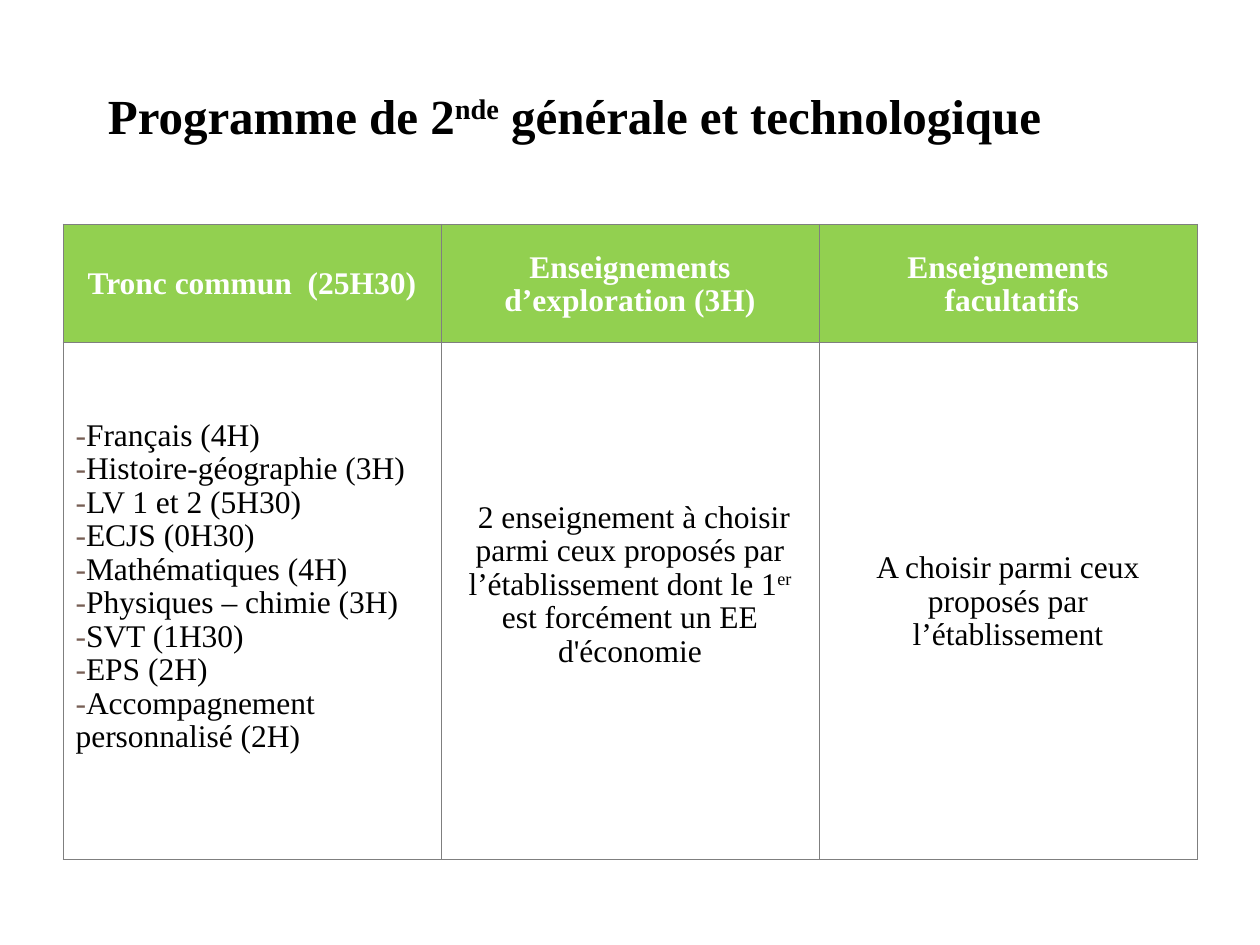
from dataclasses import dataclass

from lxml.etree import SubElement
from pptx import Presentation
from pptx.dml.color import RGBColor
from pptx.enum.text import MSO_ANCHOR, MSO_AUTO_SIZE, PP_ALIGN
from pptx.oxml.ns import qn
from pptx.util import Inches, Pt


@dataclass(frozen=True)
class Theme:
    font: str = "Times New Roman"
    title_size: int = 28
    table_size: int = 18
    text: str = "000000"
    header_text: str = "FFFFFF"
    header_fill: str = "92D050"
    bullet: str = "775F55"
    border: str = "7F7F7F"
    border_width: float = 0.45


THEME = Theme()
HEADERS = [
    ["Tronc commun  (25H30)"],
    ["Enseignements", "d’exploration (3H)"],
    ["Enseignements", " facultatifs"],
]
CORE_SUBJECTS = [
    "Français (4H)",
    "Histoire-géographie (3H)",
    "LV 1 et 2 (5H30)",
    "ECJS (0H30)",
    "Mathématiques (4H)",
    "Physiques – chimie (3H)",
    "SVT (1H30)",
    "EPS (2H)",
    "Accompagnement personnalisé (2H)",
]
# A ^ marks the start and the end of raised text
EXPLORATION = [
    " 2 enseignement à choisir parmi ceux proposés par l’établissement"
    " dont le 1^er^ est forcément un EE d'économie"
]
OPTIONAL = ["A choisir parmi ceux proposés par l’établissement"]


def add_solid_fill(parent, color):
    fill = SubElement(parent, qn("a:solidFill"))
    SubElement(fill, qn("a:srgbClr"), val=color)


def add_dash(para):
    properties = para._p.get_or_add_pPr()
    properties.set("marL", "0")
    properties.set("indent", "0")
    color = SubElement(properties, qn("a:buClr"))
    SubElement(color, qn("a:srgbClr"), val=THEME.bullet)
    SubElement(properties, qn("a:buFont"), typeface=THEME.font)
    SubElement(properties, qn("a:buChar"), char="-")


def write_text(frame, lines, *, size=THEME.table_size, color=THEME.text, bold=False,
               align=PP_ALIGN.CENTER, spacing=0.96, dashed=False):
    for index, line in enumerate(lines):
        para = frame.add_paragraph() if index else frame.paragraphs[0]
        if dashed:
            add_dash(para)
        para.alignment = align
        para.line_spacing = spacing
        para.space_before = para.space_after = Pt(0)
        for position, text in enumerate(line.split("^")):
            span = para.add_run()
            span.text = text
            span.font.name = THEME.font
            span.font.size = Pt(size)
            span.font.bold = bold
            span.font.color.rgb = RGBColor.from_string(color)
            if position % 2:
                span._r.get_or_add_rPr().set("baseline", "30000")


def format_cell(cell, fill=None, top=0.07, bottom=0.05, anchor=MSO_ANCHOR.MIDDLE):
    cell.margin_left = cell.margin_right = Inches(0.1)
    cell.margin_top, cell.margin_bottom = Inches(top), Inches(bottom)
    cell.vertical_anchor = anchor
    # Borders come before the fill in the cell properties
    properties = cell._tc.get_or_add_tcPr()
    for side in ("lnL", "lnR", "lnT", "lnB"):
        line = SubElement(properties, qn(f"a:{side}"), w=str(Pt(THEME.border_width)))
        add_solid_fill(line, THEME.border)
    if fill:
        cell.fill.solid()
        cell.fill.fore_color.rgb = RGBColor.from_string(fill)
    else:
        cell.fill.background()


def place_title(page, left, top, width, height):
    title = page.shapes.title
    title.left, title.top, title.width, title.height = left, top, width, height
    frame = title.text_frame
    frame.word_wrap = True
    frame.auto_size = MSO_AUTO_SIZE.NONE
    frame.vertical_anchor = MSO_ANCHOR.MIDDLE
    frame.margin_left = frame.margin_right = frame.margin_top = frame.margin_bottom = 0
    write_text(frame, ["Programme de 2^nde^ générale et technologique"],
               size=THEME.title_size, bold=True, spacing=0.93)


def place_programme(page, left, top, width, height):
    table = page.shapes.add_table(2, len(HEADERS), left, top, width, height).table
    header_height = Inches(0.94)
    table.rows[0].height = header_height
    table.rows[1].height = height - header_height

    # Header row
    for column, lines in enumerate(HEADERS):
        cell = table.cell(0, column)
        format_cell(cell, fill=THEME.header_fill)
        write_text(cell.text_frame, lines, color=THEME.header_text, bold=True)

    # Core subjects, set down from the top of their cell
    core = table.cell(1, 0)
    format_cell(core, top=0.61, anchor=MSO_ANCHOR.TOP)
    write_text(core.text_frame, CORE_SUBJECTS, align=PP_ALIGN.LEFT, dashed=True)

    # Subjects to choose; the exploration text sits a little above the middle
    choices = ((EXPLORATION, 0.32), (OPTIONAL, 0.05))
    for column, (lines, bottom) in enumerate(choices, start=1):
        cell = table.cell(1, column)
        format_cell(cell, bottom=bottom)
        write_text(cell.text_frame, lines)


def main():
    deck = Presentation()
    deck.slide_width, deck.slide_height = Inches(10), Inches(7.5)
    page = deck.slides.add_slide(deck.slide_layouts.get_by_name("Title Only"))
    place_title(page, Inches(0.5), Inches(0.58), Inches(8.12), Inches(0.71))
    place_programme(page, Inches(0.5), Inches(1.78), Inches(9), Inches(5.04))
    deck.save("out.pptx")


if __name__ == "__main__":
    main()
